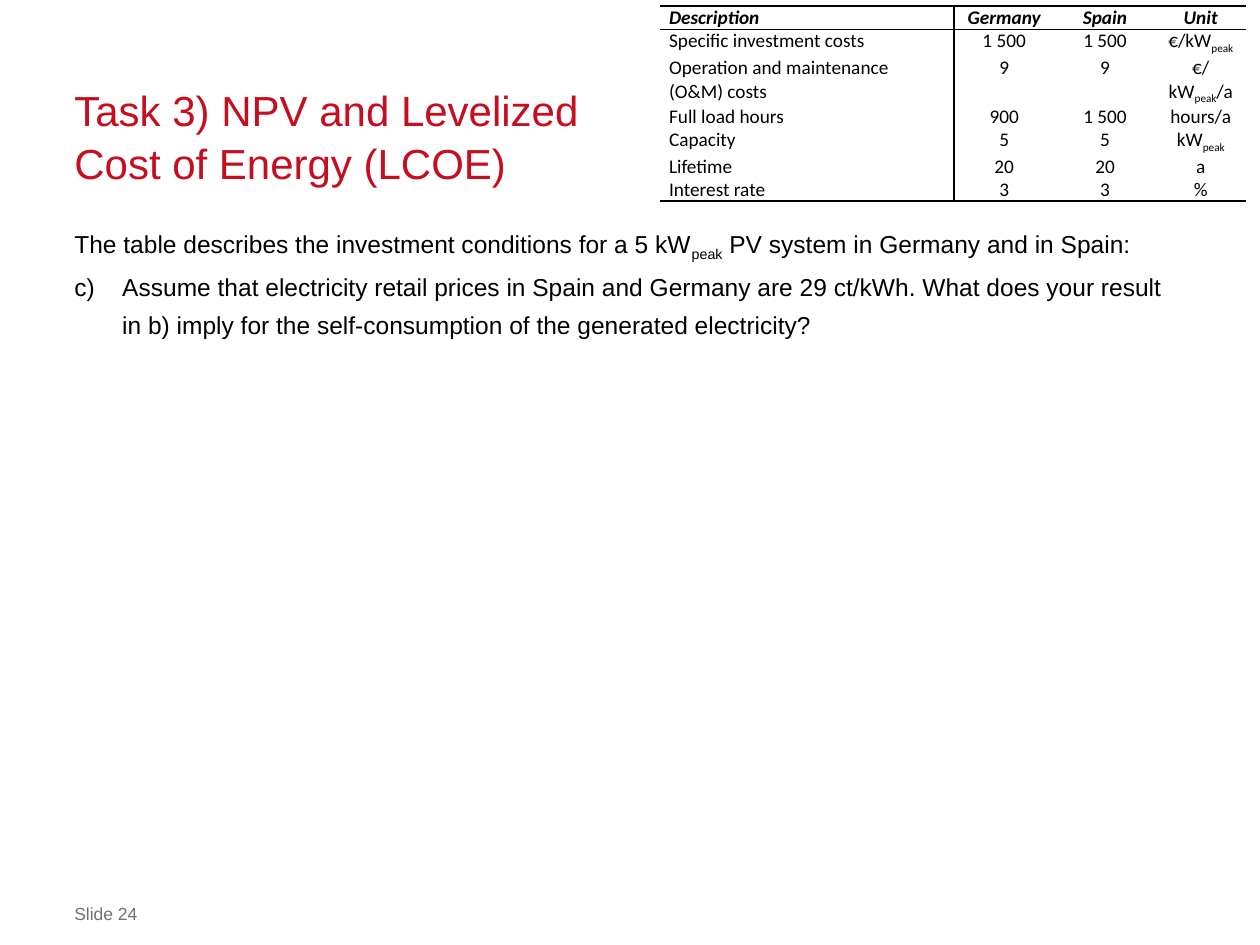
from pptx import Presentation
from pptx.dml.color import RGBColor
from pptx.enum.text import MSO_ANCHOR as ANCHOR, PP_ALIGN as ALIGN
from pptx.oxml.xmlchemy import OxmlElement as Element
from pptx.util import Inches, Pt

BLACK = "000000"


def color(value):
    return RGBColor.from_string(value)


def apply(target, values):
    for name, value in values.items():
        setattr(target, name, value)


def add_child(parent, tag, **attrs):
    child = Element(tag)
    for name, value in attrs.items():
        child.set(name, str(value))
    parent.append(child)
    return child


class SlideBuilder:
    title = {"name": "Arial", "size": Pt(24)}
    body = {"name": "Arial", "size": Pt(14)}
    footer = {"name": "Arial", "size": Pt(10)}
    cell = {"name": "Calibri", "size": Pt(11)}
    header = {**cell, "bold": True, "italic": True}

    def __init__(self, prs):
        self.s = prs.slides.add_slide(prs.slide_layouts[6])

    def runs(self, p, text, font, fill=BLACK):
        for i, part in enumerate(text.split("|")):
            if not part:
                continue
            r = p.add_run()
            r.text = part
            apply(r.font, font)
            r.font.color.rgb = color(fill)
            if i % 2:
                r._r.get_or_add_rPr().set("baseline", "-25000")

    def text(self, box, lines, font, fill=BLACK, spacing=None, anchor=ANCHOR.TOP):
        sp = self.s.shapes.add_textbox(*map(Inches, box))
        tf = sp.text_frame
        apply(tf, {"word_wrap": True, "vertical_anchor": anchor, "margin_left": 0,
                   "margin_right": 0, "margin_top": 0, "margin_bottom": 0})
        for i, line in enumerate(lines):
            p = tf.add_paragraph() if i else tf.paragraphs[0]
            if spacing:
                p.line_spacing = Pt(spacing)
            self.runs(p, line, font, fill)
        return tf

    def number(self, p, start):
        pPr = p._p.get_or_add_pPr()
        pPr.set("marL", str(Inches(0.38)))
        pPr.set("indent", str(-Inches(0.38)))
        add_child(pPr, "a:buFont", typeface="+mj-lt")
        add_child(pPr, "a:buAutoNum", type="alphaLcParenR", startAt=start)

    def borders(self, cell, widths):
        tcPr = cell._tc.get_or_add_tcPr()
        for i, side in enumerate("LRTB"):
            ln = Element(f"a:ln{side}")
            width = widths.get(side)
            if width:
                ln.set("w", str(Pt(width)))
                solid = add_child(ln, "a:solidFill")
                add_child(solid, "a:srgbClr", val=BLACK)
            else:
                ln.set("w", "0")
                add_child(ln, "a:noFill")
            tcPr.insert(i, ln)

    def table(self, left, top, widths, row_height, rows):
        frame = self.s.shapes.add_table(
            len(rows), len(widths), Inches(left), Inches(top),
            Inches(sum(widths)), Inches(row_height * len(rows)))
        table = frame.table
        apply(table, {"first_row": False, "horz_banding": False})
        for column, width in zip(table.columns, widths):
            column.width = Inches(width)
        for i, row in enumerate(rows):
            table.rows[i].height = Inches(row_height)
            for j, text in enumerate(row):
                cell = table.cell(i, j)
                apply(cell, {"margin_left": Inches(0.07), "margin_right": Inches(0.07),
                             "margin_top": 0, "margin_bottom": 0,
                             "vertical_anchor": ANCHOR.TOP if i else ANCHOR.MIDDLE})
                cell.fill.background()
                p = cell.text_frame.paragraphs[0]
                p.alignment = ALIGN.CENTER if j else ALIGN.LEFT
                self.runs(p, text, self.cell if i else self.header)
                self.borders(cell, {
                    "L": 1 if j == 1 else 0,
                    "R": 1 if j == 0 else 0,
                    "T": {0: 1.5, 1: 1}.get(i, 0),
                    "B": {0: 1, len(rows) - 1: 1.5}.get(i, 0)})


def main():
    prs = Presentation()
    apply(prs, {"slide_width": Inches(10), "slide_height": Inches(7.5)})
    slide = SlideBuilder(prs)
    slide.text((0.59, 0.65, 4.5, 0.84),
               ["Task 3) NPV and Levelized", "Cost of Energy (LCOE)"],
               slide.title, "C50E1F", 30, ANCHOR.BOTTOM)
    tf = slide.text((0.59, 1.78, 8.82, 4.78), [
        "The table describes the investment conditions for a 5 kW|peak| PV system "
        "in Germany and in Spain:",
        "Assume that electricity retail prices in Spain and Germany are 29 ct/kWh. "
        "What does your result in b) imply for the self-consumption of the "
        "generated electricity?"], slide.body, spacing=22)
    slide.number(tf.paragraphs[1], 3)
    slide.text((0.59, 7.17, 8.82, 0.17), ["Slide 24"], slide.footer, "717171")
    slide.table(5.24, 0.05, [2.33, 0.8, 0.8, 0.72], 0.18, [
        ("Description", "Germany", "Spain", "Unit"),
        ("Specific investment costs", "1 500", "1 500", "€/kW|peak"),
        ("Operation and maintenance (O&M) costs", "9", "9", "€/kW|peak|/a"),
        ("Full load hours", "900", "1 500", "hours/a"),
        ("Capacity", "5", "5", "kW|peak"),
        ("Lifetime", "20", "20", "a"),
        ("Interest rate", "3", "3", "%")])
    prs.save("out.pptx")


if __name__ == "__main__":
    main()
